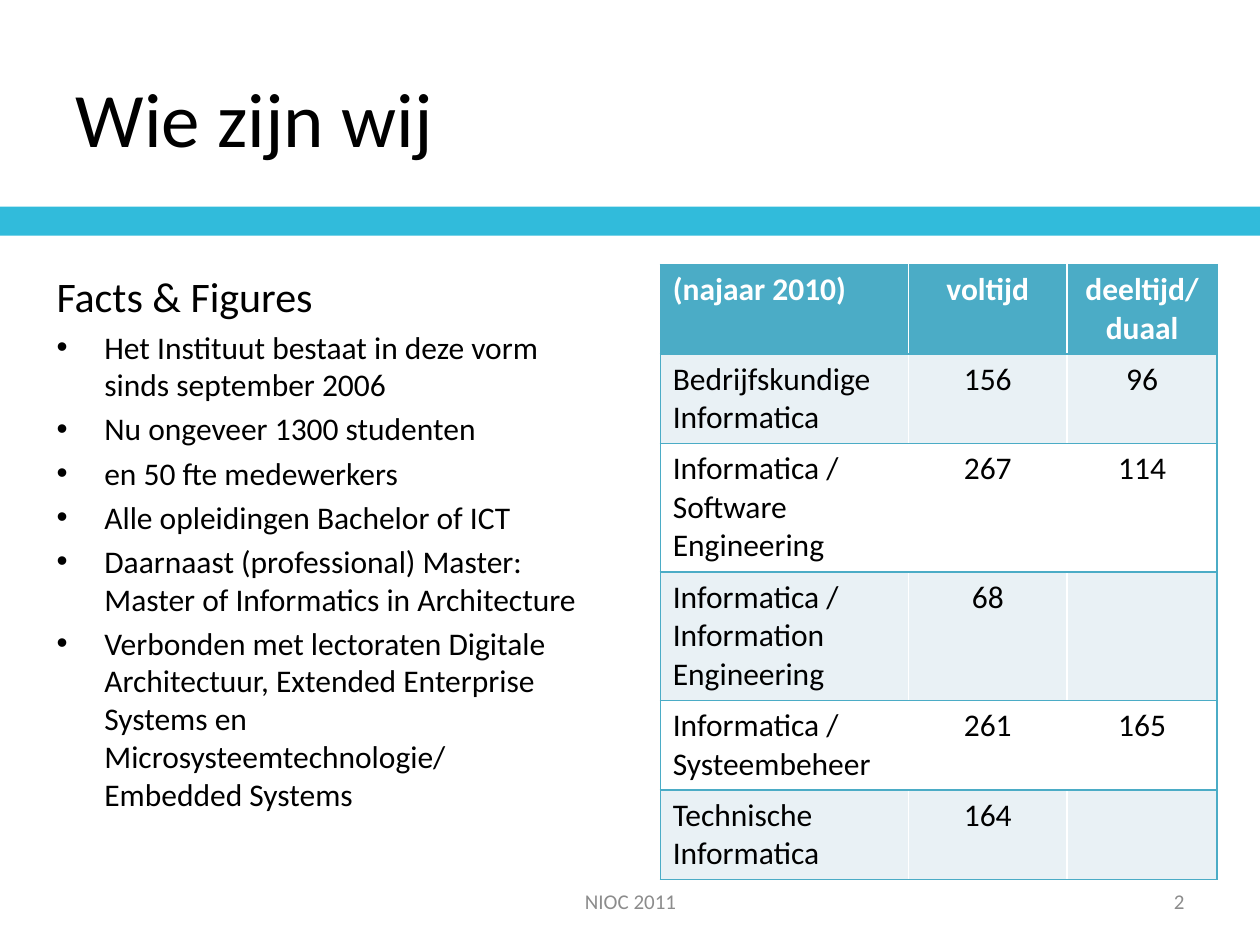
"""Builds the slide 'Wie zijn wij' with facts and a table of student numbers."""
from lxml import etree
from pptx import Presentation
from pptx.dml.color import RGBColor
from pptx.enum.shapes import MSO_SHAPE
from pptx.enum.text import MSO_ANCHOR, MSO_AUTO_SIZE, PP_ALIGN
from pptx.oxml.ns import qn
from pptx.util import Inches, Pt

LEFT, CENTER, RIGHT = PP_ALIGN.LEFT, PP_ALIGN.CENTER, PP_ALIGN.RIGHT
TOP, MIDDLE = MSO_ANCHOR.TOP, MSO_ANCHOR.MIDDLE
THEME = {
    "font": "Calibri",
    "text": "000000", "white": "FFFFFF", "muted": "8C8C8C",
    "bar": "31BBDB", "accent": "4BACC6", "band": "E9F1F5",
    "title": 44, "heading": 24, "body": 18, "footer": 12,
}


def add_text(p, text, size, color, align=LEFT, bold=False):
    p.alignment = align
    r = p.add_run()
    r.text = text
    fmt = {"name": THEME["font"], "size": Pt(THEME[size]), "bold": bold}
    for name, value in fmt.items():
        setattr(r.font, name, value)
    r.font.color.rgb = RGBColor.from_string(THEME[color])


def add_borders(cell, sides):
    tcPr = cell._tc.get_or_add_tcPr()
    for i, side in enumerate(sides):
        ln = etree.Element(qn(f"a:ln{side}"), w=str(Pt(1)))
        fill = etree.SubElement(ln, qn("a:solidFill"))
        etree.SubElement(fill, qn("a:srgbClr"), val=THEME["accent"])
        tcPr.insert(i, ln)


prs = Presentation()
prs.slide_width, prs.slide_height = Inches(10), Inches(7.5)
s = prs.slides.add_slide(prs.slide_layouts[5])

sp = s.shapes.add_shape(MSO_SHAPE.RECTANGLE, 0, Inches(1.64), prs.slide_width, Inches(0.23))
sp.shadow.inherit = False
sp.fill.solid()
sp.fill.fore_color.rgb = RGBColor.from_string(THEME["bar"])
sp.line.fill.background()

title = s.shapes.title
box = {"left": 0.5, "top": 0.3, "width": 7.7, "height": 1.25}
for name, value in box.items():
    setattr(title, name, Inches(value))
title.text_frame.vertical_anchor = MIDDLE
title.text_frame.auto_size = MSO_AUTO_SIZE.NONE
add_text(title.text_frame.paragraphs[0], "Wie zijn wij", "title", "text")

facts = [
    "Het Instituut bestaat in deze vorm sinds september 2006",
    "Nu ongeveer 1300 studenten",
    "en 50 fte medewerkers",
    "Alle opleidingen Bachelor of ICT",
    "Daarnaast (professional) Master: Master of Informatics in Architecture",
    "Verbonden met lectoraten Digitale Architectuur, Extended Enterprise "
    "Systems en Microsysteemtechnologie/ Embedded Systems",
]
tf = s.shapes.add_textbox(Inches(0.35), Inches(2.1), Inches(4.42), Inches(4.75)).text_frame
tf.word_wrap = True
add_text(tf.paragraphs[0], "Facts & Figures", "heading", "text")
for fact in facts:
    p = tf.add_paragraph()
    pPr = p._p.get_or_add_pPr()
    pPr.set("marL", str(Inches(0.38)))
    pPr.set("indent", str(-Inches(0.38)))
    etree.SubElement(pPr, qn("a:buFont"), typeface="Arial")
    etree.SubElement(pPr, qn("a:buChar"), char="•")
    p.space_before = Pt(3.6)
    add_text(p, fact, "body", "text")

rows = [
    ("(najaar 2010)", "voltijd", "deeltijd/\nduaal"),
    ("Bedrijfskundige Informatica", "156", "96"),
    ("Informatica / Software Engineering", "267", "114"),
    ("Informatica / Information Engineering", "68", ""),
    ("Informatica / Systeembeheer", "261", "165"),
    ("Technische Informatica", "164", ""),
]
col_widths = [1.97, 1.26, 1.19]
row_heights = [0.71, 0.71, 1.02, 1.02, 0.71, 0.71]
table = s.shapes.add_table(
    len(rows), len(col_widths), Inches(5.24), Inches(2.1),
    Inches(sum(col_widths)), Inches(sum(row_heights)),
).table
for col, width in zip(table.columns, col_widths):
    col.width = Inches(width)
for i, (row, height) in enumerate(zip(rows, row_heights)):
    table.rows[i].height = Inches(height)
    header = i == 0
    fill = "accent" if header else "band" if i % 2 else "white"
    for j, text in enumerate(row):
        cell = table.cell(i, j)
        cell.fill.solid()
        cell.fill.fore_color.rgb = RGBColor.from_string(THEME[fill])
        add_borders(cell, ("LTB", "TB", "RTB")[j])
        tf = cell.text_frame
        for k, line in enumerate(text.split("\n")):
            p = tf.add_paragraph() if k else tf.paragraphs[0]
            if line:
                add_text(p, line, "body", "white" if header else "text",
                         CENTER if j else LEFT, header)

for text, left, width, align in [("NIOC 2011", 3.42, 3.17, CENTER), ("2", 7.17, 2.33, RIGHT)]:
    tf = s.shapes.add_textbox(Inches(left), Inches(6.95), Inches(width), Inches(0.4)).text_frame
    tf.word_wrap = True
    tf.vertical_anchor = MIDDLE
    add_text(tf.paragraphs[0], text, "footer", "muted", align)

prs.save("out.pptx")
